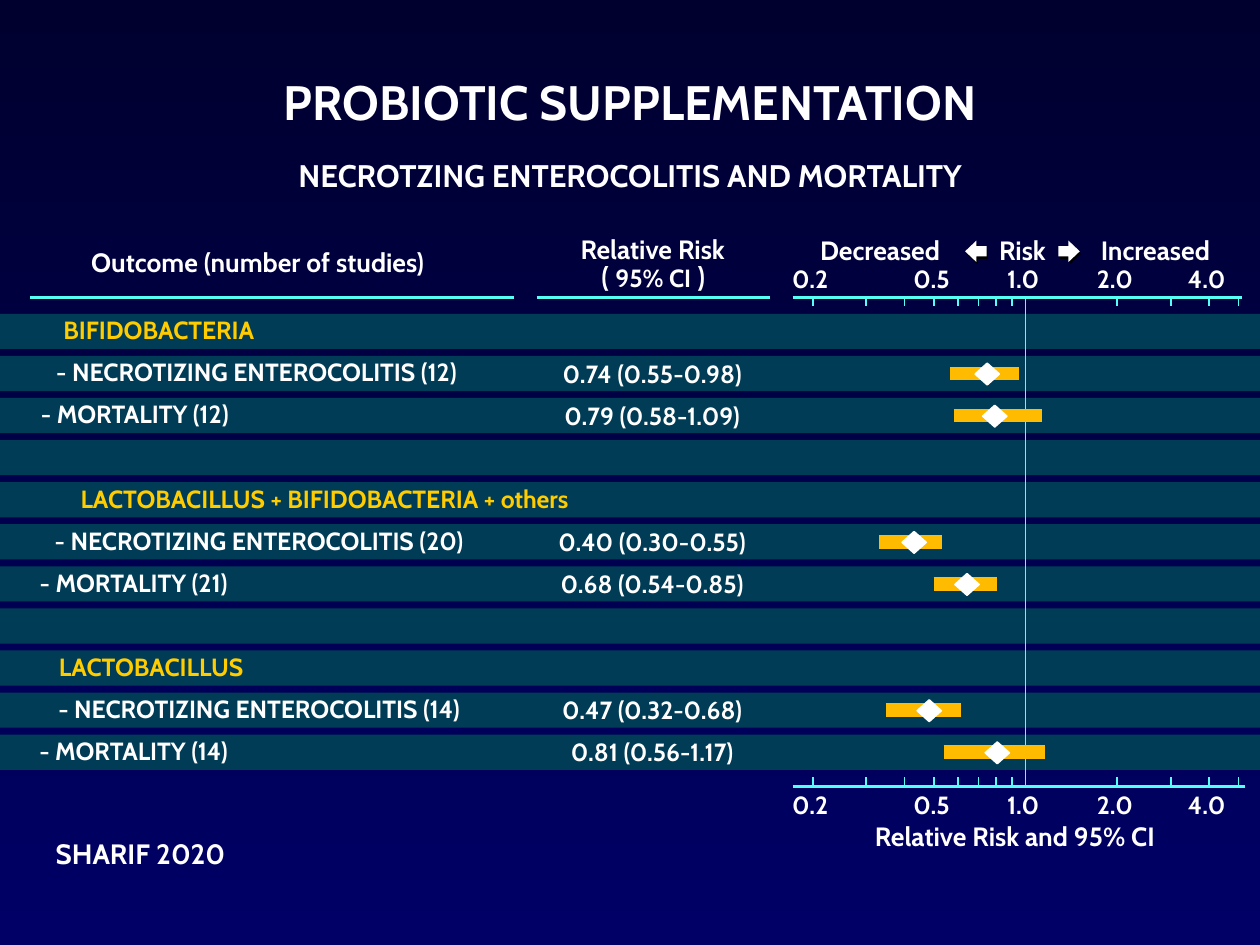
import math

from lxml import etree
from pptx import Presentation
from pptx.dml.color import RGBColor
from pptx.enum.shapes import MSO_CONNECTOR, MSO_SHAPE
from pptx.enum.text import MSO_ANCHOR, MSO_AUTO_SIZE, PP_ALIGN
from pptx.oxml.ns import qn
from pptx.util import Inches, Pt

STRAIGHT = MSO_CONNECTOR.STRAIGHT
RECTANGLE, DIAMOND = MSO_SHAPE.RECTANGLE, MSO_SHAPE.DIAMOND
LEFT_ARROW, RIGHT_ARROW = MSO_SHAPE.LEFT_ARROW, MSO_SHAPE.RIGHT_ARROW

WHITE = RGBColor(0xFF, 0xFF, 0xFF)
BLACK = RGBColor(0, 0, 0)
YELLOW = RGBColor(0xFF, 0xCC, 0x00)
AMBER = RGBColor(0xFF, 0xBB, 0x00)
CYAN = RGBColor(0x55, 0xFF, 0xF4)
BAND = RGBColor(0x00, 0x3C, 0x55)
NIGHT = RGBColor(0x00, 0x00, 0x2F)
NAVY = RGBColor(0x00, 0x00, 0x66)

SMALL, MEDIUM, LARGE = 14.2, 15.1, 16
THIN, RULE, BAR = 1, 1.88, 7.88

FRAME_FORMAT = {
    "margin_left": 0, "margin_right": 0, "margin_top": 0, "margin_bottom": 0,
    "word_wrap": False, "auto_size": MSO_AUTO_SIZE.SHAPE_TO_FIT_TEXT,
    "vertical_anchor": MSO_ANCHOR.TOP,
}

UNITY_X, LOG_UNIT = 8.14, 1.05
TICKS = (0.2, 0.3, 0.4, 0.5, 0.6, 0.7, 0.8, 0.9, 2, 3, 4, 5)
LABELLED_TICKS = (0.2, 0.5, 1, 2, 4)
TOP_AXIS_Y, BOTTOM_AXIS_Y = 2.36, 6.24

# Label, label left, label width, relative risk, drawn interval (low, middle, high);
# a group heading has no result and None is an empty band.
ROWS = (
    ("BIFIDOBACTERIA", 0.37, 1.78, None, None),
    ("- NECROTIZING ENTEROCOLITIS (12)", 0.13, 3.81, "0.74 (0.55-0.98)", (7.54, 7.83, 8.09)),
    ("- MORTALITY (12)", 0.15, 1.84, "0.79 (0.58-1.09)", (7.57, 7.89, 8.27)),
    None,
    ("LACTOBACILLUS + BIFIDOBACTERIA + others", 0.25, 4.65, None, None),
    ("- NECROTIZING ENTEROCOLITIS (20)", 0.15, 3.81, "0.40 (0.30-0.55)", (6.98, 7.25, 7.48)),
    ("- MORTALITY (21)", 0.14, 1.84, "0.68 (0.54-0.85)", (7.41, 7.67, 7.91)),
    None,
    ("LACTOBACILLUS", 0.37, 1.66, None, None),
    ("- NECROTIZING ENTEROCOLITIS (14)", 0.15, 3.81, "0.47 (0.32-0.68)", (7.03, 7.37, 7.63)),
    ("- MORTALITY (14)", 0.14, 1.84, "0.81 (0.56-1.17)", (7.49, 7.91, 8.29)),
)


def place(shape, left, top, width, height):
    shape.left, shape.top = Inches(left), Inches(top)
    shape.width, shape.height = Inches(width), Inches(height)


def write(shape, runs, color=WHITE):
    """Fill a text shape with one centred line of (text, size) runs."""
    for name, value in FRAME_FORMAT.items():
        setattr(shape.text_frame, name, value)
    paragraph = shape.text_frame.paragraphs[0]
    paragraph.alignment = PP_ALIGN.CENTER
    for text, size in runs:
        run = paragraph.add_run()
        run.text = text
        for name, value in {"name": "Cabin", "size": Pt(size), "bold": True}.items():
            setattr(run.font, name, value)
        run.font.color.rgb = color


def add_text(slide, box, *runs, color=WHITE):
    write(slide.shapes.add_textbox(*map(Inches, box)), runs, color)


def add_line(slide, start, end, width, color=CYAN):
    line = slide.shapes.add_connector(STRAIGHT, *map(Inches, start + end))
    line.line.color.rgb = color
    line.line.width = Pt(width)
    etree.SubElement(line._element.spPr, qn("a:effectLst"))


def add_filled(slide, preset, box, color):
    shape = slide.shapes.add_shape(preset, *map(Inches, box))
    shape.shadow.inherit = False
    shape.fill.solid()
    shape.fill.fore_color.rgb = color
    shape.line.fill.background()
    return shape


def risk_x(risk):
    """Place of a relative risk on the logarithmic axis."""
    return UNITY_X + LOG_UNIT * math.log(risk)


def add_background(slide):
    fill = slide.background.fill
    fill.gradient()
    fill.gradient_angle = 270
    for stop, color in zip(fill.gradient_stops, (NIGHT, NAVY)):
        stop.color.rgb = color


def add_heading(slide, left, top, width):
    place(slide.shapes.title, left, top, width, 0.46)
    write(slide.shapes.title, [("PROBIOTIC SUPPLEMENTATION", 27.6)])
    add_text(slide, (left, top + 0.67, width, 0.3),
             ("NECROTZING ENTEROCOLITIS AND MORTALITY", 17.8))


def add_axis(slide, left, right, y, tick_top, label_top):
    add_line(slide, (left, y), (right, y), RULE)
    for risk in TICKS:
        x = risk_x(risk)
        add_line(slide, (x, tick_top), (x, tick_top + 0.06), THIN)
    for risk in LABELLED_TICKS:
        add_text(slide, (risk_x(risk) - 0.18, label_top, 0.32, 0.24), (f"{risk:.1f}", SMALL))


def add_direction_arrow(slide, preset, left, top):
    for offset, color in ((0.01, BLACK), (0, WHITE)):
        arrow = add_filled(slide, preset, (left + offset, top + 2 * offset, 0.17, 0.17), color)
        arrow.adjustments[0] = 0.47
        arrow.adjustments[1] = 0.53


def add_column_heads(slide, top):
    add_text(slide, (0.48, top + 0.1, 3.13, 0.25), ("Outcome (number of studies)", MEDIUM))
    add_text(slide, (4.49, top, 1.38, 0.25), ("Relative Risk", MEDIUM))
    add_text(slide, (4.63, top + 0.21, 1.11, 0.27),
             ("( ", LARGE), ("95% CI", SMALL), (" )", LARGE))
    for left, right in ((0.24, 4.08), (4.26, 6.11)):
        add_line(slide, (left, TOP_AXIS_Y), (right, TOP_AXIS_Y), RULE)
    for text, left, width in (("Decreased", 6.43, 1.11), ("Risk", 7.89, 0.45),
                              ("Increased", 8.64, 1.06)):
        add_text(slide, (left, top + 0.01, width, 0.25), (text, MEDIUM))
    add_direction_arrow(slide, LEFT_ARROW, 7.66, top + 0.06)
    add_direction_arrow(slide, RIGHT_ARROW, 8.4, top + 0.06)


def add_interval(slide, low, middle, high, y):
    add_line(slide, (low, y), (high, y), BAR, AMBER)
    estimate = add_filled(slide, DIAMOND, (middle - 0.09, y - 0.08, 0.19, 0.17), WHITE)
    estimate.line.color.rgb = WHITE
    estimate.line.width = Pt(THIN)


def add_results(slide, top, pitch):
    row_tops = [top + pitch * index for index in range(len(ROWS))]
    for row_top in row_tops:
        add_filled(slide, RECTANGLE, (0, row_top, 10, 0.28), BAND)
    add_line(slide, (UNITY_X, TOP_AXIS_Y), (UNITY_X, BOTTOM_AXIS_Y), THIN)
    for row, row_top in zip(ROWS, row_tops):
        if row is None:
            continue
        label, left, width, relative_risk, interval = row
        add_text(slide, (left, row_top + 0.01, width, 0.24), (label, SMALL),
                 color=WHITE if relative_risk else YELLOW)
        if relative_risk:
            add_text(slide, (4.35, row_top + 0.02, 1.65, 0.24), (relative_risk, SMALL))
            add_interval(slide, *interval, row_top + 0.14)


def main():
    presentation = Presentation()
    presentation.slide_width, presentation.slide_height = Inches(10), Inches(7.5)
    slide = presentation.slides.add_slide(presentation.slide_layouts[5])
    add_background(slide)
    add_heading(slide, 1.86, 0.57, 6.28)
    add_column_heads(slide, 1.85)
    add_axis(slide, 6.29, 9.86, TOP_AXIS_Y, TOP_AXIS_Y + 0.01, 2.09)
    add_results(slide, 2.49, 3.34 / (len(ROWS) - 1))
    add_axis(slide, 6.29, 9.88, BOTTOM_AXIS_Y, BOTTOM_AXIS_Y - 0.07, 6.27)
    add_text(slide, (6.69, 6.51, 2.73, 0.25), ("Relative Risk and 95% CI", MEDIUM))
    add_text(slide, (0.36, 6.64, 1.51, 0.27), ("SHARIF 2020", LARGE))
    presentation.save("out.pptx")


if __name__ == "__main__":
    main()
